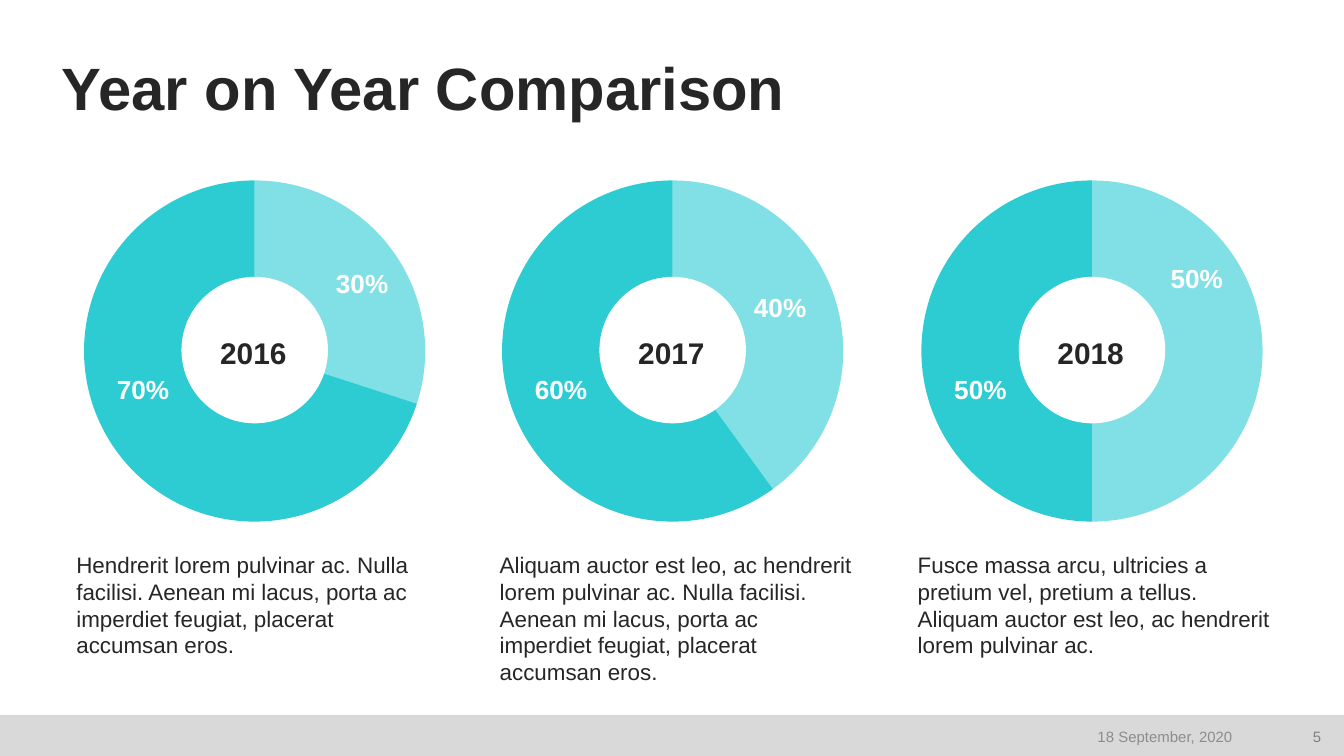
"""Build the Year on Year Comparison slide with three yearly rings."""
from pptx import Presentation, util as u
from pptx.chart import data as cd
from pptx.dml import color as co
from pptx.enum import chart as ch, shapes as sh, text as tx
from pptx.oxml import parse_xml
from pptx.oxml.ns import nsdecls

DARK, WHITE = "262626", "FFFFFF"
LEFT, MID, RIGHT = tx.PP_ALIGN.LEFT, tx.PP_ALIGN.CENTER, tx.PP_ALIGN.RIGHT


def paint(fill, hue):
    fill.solid()
    fill.fore_color.rgb = co.RGBColor.from_string(hue)


def write(box, words, size, hue, align=LEFT, bold=False, inset=None,
          anchor=tx.MSO_ANCHOR.TOP):
    frame = box.text_frame
    frame.text = words
    frame.word_wrap = True
    frame.auto_size = tx.MSO_AUTO_SIZE.NONE
    frame.vertical_anchor = anchor
    if inset is not None:
        frame.margin_left = frame.margin_right = u.Inches(inset)
        frame.margin_top = frame.margin_bottom = u.Inches(inset)
    para = frame.paragraphs[0]
    para.alignment = align
    font = para.runs[0].font
    font.name, font.size, font.bold = "Arial", u.Pt(size), bold
    paint(font.fill, hue)


prs = Presentation()
prs.slide_width = u.Inches(10)
prs.slide_height = u.Inches(10) * 9 // 16
slide = prs.slides.add_slide(prs.slide_layouts[5])
items = slide.shapes

band = items.add_shape(sh.MSO_SHAPE.RECTANGLE, 0, u.Inches(5.32),
                       u.Inches(10), prs.slide_height - u.Inches(5.32))
band.shadow.inherit = False
paint(band.fill, "D9D9D9")
band.line.fill.background()

title = items.title
title.left, title.top = u.Inches(0.46), u.Inches(0.4)
title.width, title.height = u.Inches(9.1), u.Inches(0.52)
write(title, "Year on Year Comparison", 32, DARK, bold=True, inset=0,
      anchor=tx.MSO_ANCHOR.BOTTOM)
title.text_frame.paragraphs[0].line_spacing = 0.9

years = [
    ("2016", 30, 0.61, (2.41, 1.99, 0.57), 0.47,
     "Hendrerit lorem pulvinar ac. Nulla facilisi. Aenean mi lacus, "
     "porta ac imperdiet feugiat, placerat accumsan eros."),
    ("2017", 40, 3.72, (5.46, 2.17, 0.69), 3.62,
     "Aliquam auctor est leo, ac hendrerit lorem pulvinar ac. Nulla facilisi. "
     "Aenean mi lacus, porta ac imperdiet feugiat, placerat accumsan eros."),
    ("2018", 50, 6.84, (8.59, 1.95, 0.63), 6.73,
     "Fusce massa arcu, ultricies a pretium vel, pretium a tellus. "
     "Aliquam auctor est leo, ac hendrerit lorem pulvinar ac."),
]
for year, share, left, place, start, note in years:
    data = cd.CategoryChartData()
    data.categories = ["1", "2"]
    data.add_series("Series 1", (share, 100 - share))
    chart = items.add_chart(ch.XL_CHART_TYPE.PIE, u.Inches(left), u.Inches(1.33),
                            u.Inches(2.57), u.Inches(2.57), data).chart
    chart.has_legend = chart.has_title = False
    chart.font.name, chart.font.size = "Arial", u.Pt(10)
    paint(chart.font.fill, "000000")
    plot = chart.plots[0]
    plot.vary_by_categories = False
    paint(plot.series[0].format.fill, "98CCB8")
    for spot, hue in enumerate(("81E0E5", "2DCCD3")):
        part = plot.series[0].points[spot].format
        paint(part.fill, hue)
        part.line.fill.background()
    area = chart._chartSpace.chart.plotArea
    for old in area.findall("{*}layout"):
        area.remove(old)
    area.insert(0, parse_xml(
        f'<c:layout {nsdecls("c")}><c:manualLayout><c:layoutTarget val="inner"/>'
        '<c:xMode val="edge"/><c:yMode val="edge"/><c:x val="0.005"/>'
        '<c:y val="0.005"/><c:w val="0.99"/><c:h val="0.988"/>'
        '</c:manualLayout></c:layout>'))

    hole = items.add_shape(sh.MSO_SHAPE.OVAL, u.Inches(left + 0.74),
                           u.Inches(2.06), u.Inches(1.09), u.Inches(1.09))
    hole.shadow.inherit = False
    paint(hole.fill, WHITE)
    hole.line.fill.background()

    labels = [(f"{share}%", *place, 0.32, 14, WHITE),
              (f"{100 - share}%", left + 0.15, 2.78, 0.61, 0.27, 14, WHITE),
              (year, left + 0.97, 2.49, 0.61, 0.27, 16, DARK)]
    for words, side, top, width, height, size, hue in labels:
        box = items.add_textbox(u.Inches(side), u.Inches(top),
                                u.Inches(width), u.Inches(height))
        write(box, words, size, hue, MID, True, 0)

    box = items.add_textbox(u.Inches(start), u.Inches(4.05),
                            u.Inches(2.83), u.Inches(1.03))
    write(box, note, 12, DARK)

for words, left, width, hue in (("5", 9.56, 0.37, "808080"),
                                ("18 September, 2020", 7.02, 2.25, "8C8C8C")):
    box = items.add_textbox(u.Inches(left), u.Inches(5.35),
                            u.Inches(width), u.Inches(0.26))
    write(box, words, 8, hue, RIGHT, anchor=tx.MSO_ANCHOR.MIDDLE)

prs.save("out.pptx")
